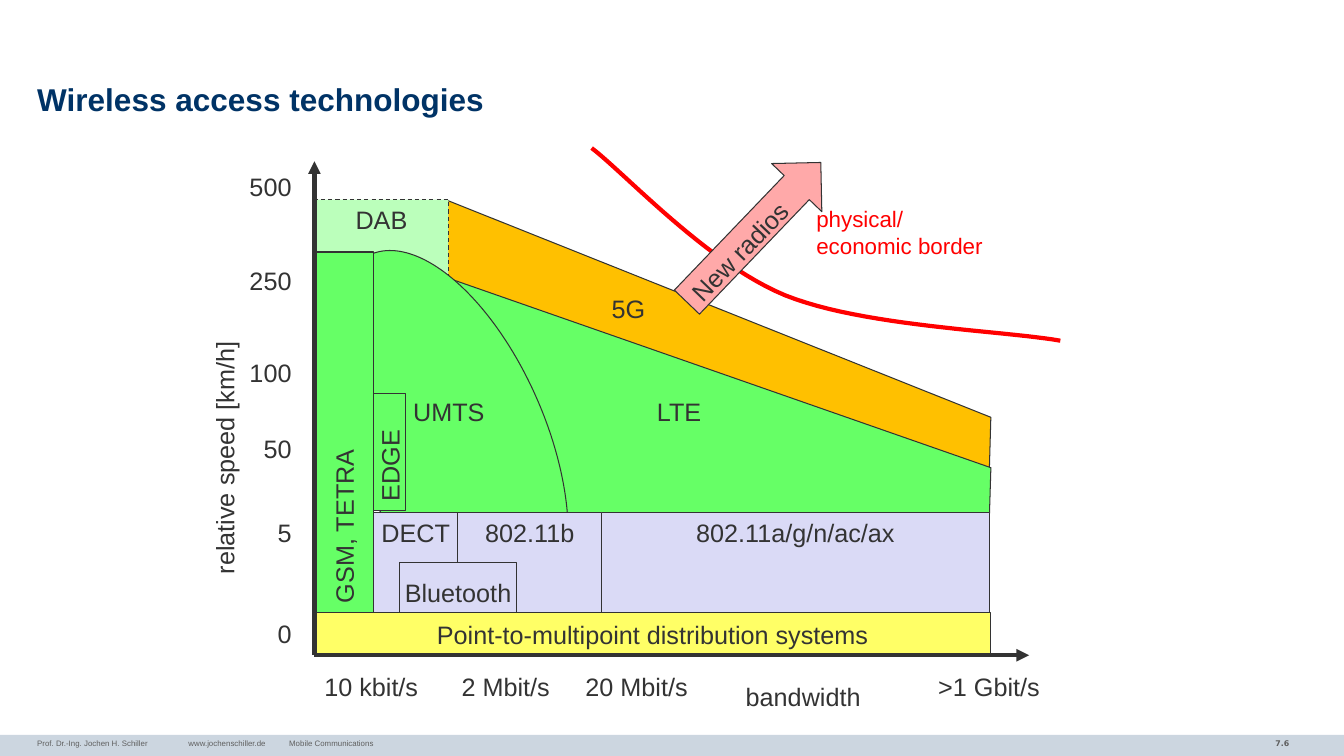
from lxml.etree import SubElement
from pptx import Presentation
from pptx.dml.color import RGBColor
from pptx.enum.dml import MSO_LINE
from pptx.enum.shapes import MSO_CONNECTOR, MSO_SHAPE as Form
from pptx.enum.text import MSO_ANCHOR as Anchor, PP_ALIGN as Align
from pptx.oxml.ns import qn
from pptx.util import Pt

rgb = RGBColor.from_string
INK, RED, GREEN, LAVENDER = "333333", "FF0000", "66FF66", "DADAF6"


def write(shape, text, size=18, color=INK, align=Align.LEFT, anchor=Anchor.TOP, bold=None, wrap=False, font="Arial"):
    frame = shape.text_frame
    frame.text = text
    frame.word_wrap = wrap
    frame.vertical_anchor = anchor
    for paragraph in frame.paragraphs:
        paragraph.alignment = align
        paragraph.font.name = font
        paragraph.font.size = Pt(size)
        paragraph.font.bold = bold
        paragraph.font.color.rgb = rgb(color)
    return frame


def paint(shape, fill):
    shape.shadow.inherit = False
    shape.fill.solid()
    shape.fill.fore_color.rgb = rgb(fill)
    shape.line.color.rgb = rgb(INK)
    shape.line.width = Pt(0.75)


deck = Presentation()
deck.slide_width, deck.slide_height = Pt(960), Pt(540)
slide = deck.slides.add_slide(deck.slide_layouts[6])
shapes = slide.shapes

footer_bar = shapes.add_shape(Form.RECTANGLE, 0, Pt(524.9), Pt(960), Pt(15.1))
paint(footer_bar, "CCD6E0")
footer_bar.line.fill.background()

page_number = shapes.add_textbox(Pt(799.2), Pt(524.2), Pt(128.9), Pt(16.6))
write(page_number, "7.6", 5.6, "5F5F5F", Align.RIGHT, bold=True, wrap=True, font="DejaVu Sans")

footer = shapes.add_textbox(Pt(26.6), Pt(524.2), Pt(628), Pt(15.8))
footer.text_frame.margin_left = footer.text_frame.margin_right = 0
tab_list = SubElement(footer.text_frame.paragraphs[0]._p.get_or_add_pPr(), qn("a:tabLst"))
for stop in (85, 146.3):
    SubElement(tab_list, qn("a:tab"), pos=str(Pt(stop)), algn="l")
write(footer, "Prof. Dr.-Ing. Jochen H. Schiller\twww.jochenschiller.de\tMobile Communications",
      5.6, "5F5F5F", wrap=True)

title = shapes.add_textbox(Pt(26.6), Pt(56.2), Pt(907.2), Pt(33.8))
heading = write(title, "Wireless access technologies", 22.5, "003366", anchor=Anchor.MIDDLE, bold=True, wrap=True)
heading.margin_left = heading.margin_right = heading.margin_top = heading.margin_bottom = 0
heading.paragraphs[0].line_spacing = 0.85

cellular_areas = [
    ("FFC000", [(318.2, 142.6), (707.8, 298.1), (706.3, 350.6), (316.1, 350.6)]),
    (GREEN, [(301.7, 192.2), (707.8, 334.1), (706.3, 383), (299.5, 383)]),
]
for fill, corners in cellular_areas:
    start, *rest = [(Pt(x), Pt(y)) for x, y in corners]
    outline = shapes.build_freeform(*start)
    outline.add_line_segments(rest, close=True)
    paint(outline.convert_to_shape(), fill)

border_arcs = [
    [(422.6, 105.8), (445.7, 123.1), (504.7, 187.9), (560.9, 211)],
    [(560.9, 211), (616.3, 233.3), (716.4, 236.2), (757.4, 243.4)],
]
STEPS = 24
border_points = []
for arc in border_arcs:
    for step in range(1, STEPS + 1):
        t = step / STEPS
        weights = ((1 - t) ** 3, 3 * t * (1 - t) ** 2, 3 * t ** 2 * (1 - t), t ** 3)
        border_points.append(tuple(Pt(sum(w * point[axis] for w, point in zip(weights, arc)))
                                   for axis in (0, 1)))
outline = shapes.build_freeform(Pt(422.6), Pt(105.8))
outline.add_line_segments(border_points, close=False)
border = outline.convert_to_shape()
border.shadow.inherit = False
border.fill.background()
border.line.color.rgb = rgb(RED)
border.line.width = Pt(3)

technologies = [
    ("DAB", 224.6, 142.6, 95.8, 102.2, "BBFFBB", Anchor.TOP),
    ("802.11a/g/n/ac/ax", 429.1, 365.8, 278, 84.2, LAVENDER, Anchor.TOP),
    ("", 178.6, 244.8, 285.8, 136.1, GREEN, Anchor.TOP),
    ("DECT", 267.1, 365.8, 59.8, 72, LAVENDER, Anchor.TOP),
    ("GSM, TETRA", 224.6, 180, 42, 257.8, GREEN, Anchor.MIDDLE),
    ("802.11b", 326.9, 365.8, 103, 72, LAVENDER, Anchor.TOP),
    ("Bluetooth", 285.1, 402, 84.2, 41.8, LAVENDER, Anchor.MIDDLE),
    ("Point-to-multipoint distribution systems", 224.6, 437.8, 483.1, 30.2, "FFFF66", Anchor.MIDDLE),
    ("EDGE", 267.1, 280.8, 22.3, 84.2, GREEN, Anchor.MIDDLE),
    ("New radios", 469.4, 141.1, 138.2, 49.7, "FFA9A9", Anchor.TOP),
]
forms = {"": Form.OVAL, "New radios": Form.RIGHT_ARROW}
turns = {"": 66.6, "New radios": 313.8}
upright = ("GSM, TETRA", "EDGE")
for name, x, y, width, height, fill, anchor in technologies:
    area = shapes.add_shape(forms.get(name, Form.RECTANGLE), Pt(x), Pt(y), Pt(width), Pt(height))
    paint(area, fill)
    area.rotation = turns.get(name, 0)
    if name == "DAB":
        area.line.dash_style = MSO_LINE.DASH
    if name in upright:
        write(area, name, anchor=anchor, wrap=True)
        area.element.txBody.bodyPr.set("vert", "vert270")
    elif name == "New radios":
        write(area, name, anchor=anchor)
    elif name:
        frame = write(area, name, align=Align.CENTER, anchor=anchor, wrap=True)
        frame.margin_left = frame.margin_right = 0

for end_x, end_y in ((224.6, 115.2), (735.1, 468)):
    axis = shapes.add_connector(MSO_CONNECTOR.STRAIGHT, Pt(224.6), Pt(468), Pt(end_x), Pt(end_y))
    axis.line.color.rgb = rgb(INK)
    axis.line.width = Pt(3)
    SubElement(axis.line._get_or_add_ln(), qn("a:tailEnd"), type="triangle")
    SubElement(axis.element.spPr, qn("a:effectLst"))

speeds = [("500", 118.8), ("250", 185.8), ("100", 252), ("50", 306), ("5", 365.8), ("0", 437.8)]
for speed, y in speeds:
    tick = shapes.add_textbox(Pt(170.6), Pt(y), Pt(44.7), Pt(28.8))
    write(tick, speed, align=Align.RIGHT, wrap=True)

labels = [
    ("10 kbit/s", 224.6, 475.9, 81.4), ("2 Mbit/s", 322.6, 475.9, 77.8),
    ("20 Mbit/s", 411.1, 475.9, 87.8), (">1 Gbit/s", 663.1, 475.9, 88.6),
    ("bandwidth", 525.6, 483.1, 96.5), ("UMTS", 288, 279.4, 65.5),
    ("LTE", 462.2, 279.4, 46.8), ("5G", 429.8, 205.9, 38.9),
]
for label, x, y, width in labels:
    write(shapes.add_textbox(Pt(x), Pt(y), Pt(width), Pt(28.8)), label)

speed_title = shapes.add_textbox(Pt(53.3), Pt(295.9), Pt(213.8), Pt(28.8))
write(speed_title, "relative speed [km/h]", wrap=True)
speed_title.rotation = 270

border_label = shapes.add_textbox(Pt(576), Pt(143.3), Pt(133.9), Pt(46.1))
write(border_label, "physical/\neconomic border", 16, RED)

deck.save("out.pptx")
